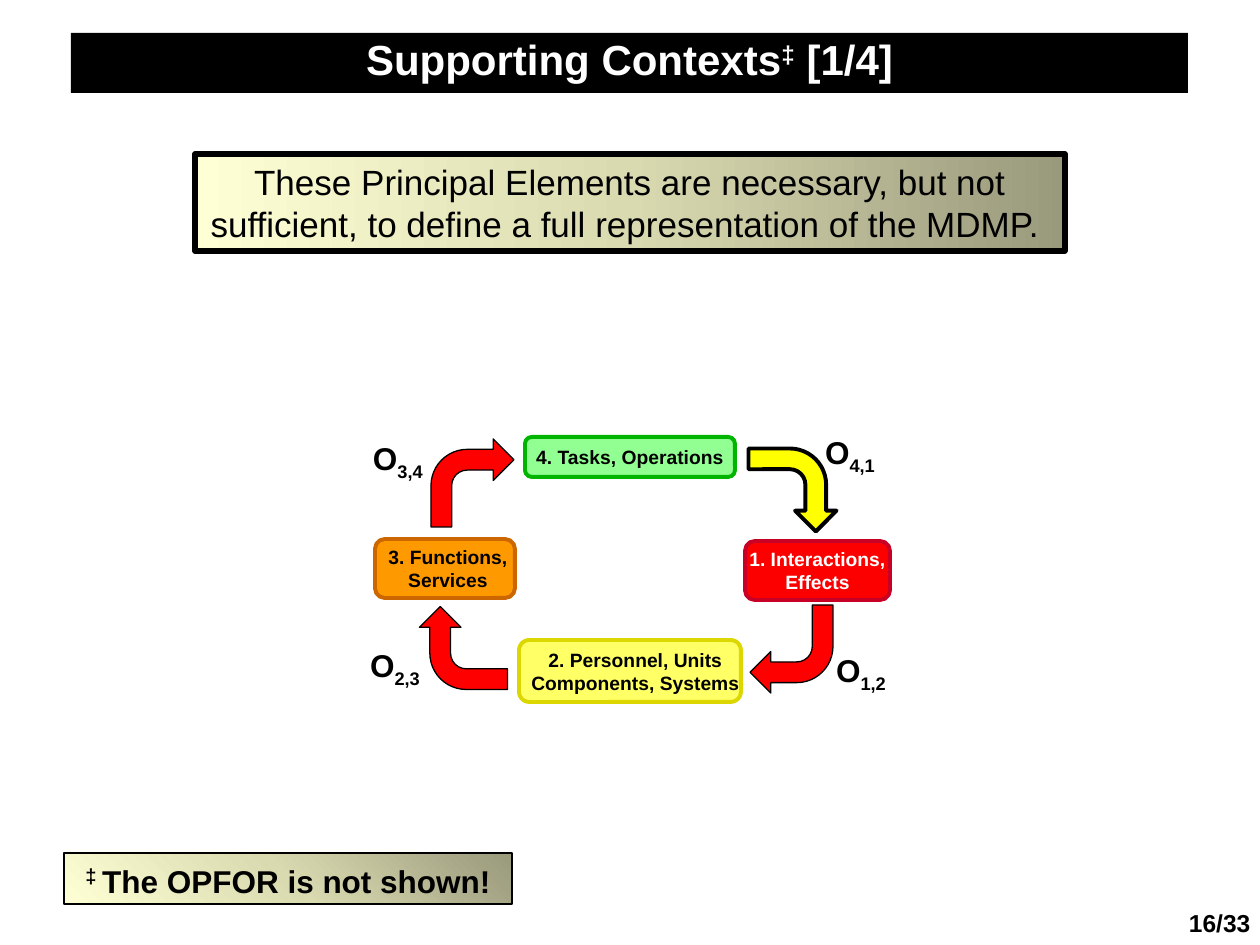
from lxml import etree
from pptx import Presentation
from pptx import util as u
from pptx.dml.color import RGBColor
from pptx.enum import shapes, text
from pptx.oxml import ns, parse_xml

PX = 914400 / 126
COLORS = {
    "black": "000000", "white": "FFFFFF",
    "shade": "99997C", "mid": "DADAB1", "cream": "FFFFD5",
    "green": "91FF91", "green edge": "00B400",
    "crimson": "FC0000", "crimson edge": "C80026",
    "lemon": "FFFF66", "lemon edge": "DCD700",
    "orange": "FF9900", "orange edge": "CC6600",
    "red": "FF0000", "yellow": "FFFF00",
}
LINEAR = '<a:lin ang="10800000" scaled="0"/>'
CORNER = '<a:path path="circle"><a:fillToRect l="100000" b="100000"/></a:path>'
SHAPE = shapes.MSO_SHAPE


def px(length):
    return u.Emu(round(length * PX))


def color(name):
    return RGBColor.from_string(COLORS[name])


def place(item, box):
    item.left, item.top, item.width, item.height = map(px, box)


def write(item, *lines, size=18, ink="black", bold=True, align=text.PP_ALIGN.CENTER,
          anchor=text.MSO_ANCHOR.TOP, inset=(13, 6, 13, 6), wrap=True, spacing=None):
    """Each line is a list of runs: (words, baseline percent, optional size)."""
    frame = item.text_frame
    frame.auto_size = text.MSO_AUTO_SIZE.NONE
    frame.word_wrap = wrap
    frame.vertical_anchor = anchor
    (frame.margin_left, frame.margin_top,
     frame.margin_right, frame.margin_bottom) = map(px, inset)
    for i, line in enumerate(lines):
        paragraph = frame.paragraphs[0] if i == 0 else frame.add_paragraph()
        paragraph.alignment = align
        if spacing:
            paragraph.line_spacing = spacing
        for words, baseline, *own_size in line:
            run = paragraph.add_run()
            run.text = words
            run.font.name = "Arial"
            run.font.size = u.Pt(own_size[0] if own_size else size)
            run.font.bold = bold
            run.font.color.rgb = color(ink)
            if baseline:
                run.font._element.set("baseline", str(baseline * 1000))


def add_block(slide, kind, box, edge, weight, fill=None):
    block = slide.shapes.add_shape(kind, *map(px, box))
    block.shadow.inherit = False
    block.line.color.rgb = color(edge)
    block.line.width = u.Pt(weight)
    if fill:
        block.fill.solid()
        block.fill.fore_color.rgb = color(fill)
    return block


def add_label(slide, box, *lines, **style):
    label = slide.shapes.add_textbox(*map(px, box))
    write(label, *lines, align=text.PP_ALIGN.LEFT, **style)


def shade(block, direction):
    """Fill with the three-stop cream gradient."""
    block.fill.gradient()
    old = block._element.spPr.find(ns.qn("a:gradFill"))
    stops = "".join(
        f'<a:gs pos="{pos}"><a:srgbClr val="{COLORS[name]}"/></a:gs>'
        for pos, name in ((0, "shade"), (50000, "mid"), (100000, "cream")))
    new = parse_xml(f'<a:gradFill {ns.nsdecls("a")} rotWithShape="1">'
                    f"<a:gsLst>{stops}</a:gsLst>{direction}</a:gradFill>")
    old.getparent().replace(old, new)


def title_bar(slide, box):
    title = slide.shapes.title
    place(title, box)
    title.fill.solid()
    title.fill.fore_color.rgb = color("black")
    write(title, [("Supporting Contexts", 0), ("‡", 30), (" [1/4]", 0)],
          size=24, ink="white", anchor=text.MSO_ANCHOR.MIDDLE, spacing=0.85)


def statement(slide, box):
    panel = add_block(slide, SHAPE.RECTANGLE, box, "black", 3)
    shade(panel, LINEAR)
    write(panel, [("These Principal Elements are necessary, but not sufficient, "
                   "to define a full representation of the MDMP. ", 0)],
          size=20, bold=False)


def footnote(slide, box):
    panel = add_block(slide, SHAPE.RECTANGLE, box, "black", 1.5)
    shade(panel, CORNER)
    write(panel, [("‡ ", 30, 20), ("The OPFOR is not shown!", 0)])


def cycle(slide, box):
    """Four elements joined clockwise by bent arrows, each with its operator."""
    left, top = box[:2]
    nodes = (
        (SHAPE.FLOWCHART_ALTERNATE_PROCESS, (166, 10, 210, 40), "green", "black", 0,
         ["4. Tasks, Operations"]),
        (SHAPE.ROUNDED_RECTANGLE, (386, 114, 145, 59), "crimson", "white", 0,
         ["1. Interactions,", "Effects"]),
        (SHAPE.ROUNDED_RECTANGLE, (160, 213, 222, 62), "lemon", "black", 11,
         ["2. Personnel, Units", "Components, Systems"]),
        (SHAPE.ROUNDED_RECTANGLE, (16, 112, 140, 59), "orange", "black", 6,
         ["3. Functions,", "Services"]),
    )
    for kind, (x, y, w, h), fill, ink, indent, lines in nodes:
        node = add_block(slide, kind, (left + x, top + y, w, h),
                         f"{fill} edge", 2.25, fill)
        write(node, *[[(line, 0)] for line in lines], size=11, ink=ink,
              anchor=text.MSO_ANCHOR.MIDDLE, inset=(indent, 0, 0, 0), wrap=False)

    steps = (
        ((72, 12), 0, "red", 0.75, "3,4", (3, 6)),
        ((63, 177), 270, "red", 0.75, "2,3", (0, 213)),
        ((391, 178), 180, "red", 0.75, "1,2", (466, 218)),
        ((392, 19), 90, "yellow", 2.25, "4,1", (455, 0)),
    )
    for (x, y), turn, fill, weight, pair, (label_x, label_y) in steps:
        arrow = add_block(slide, SHAPE.BENT_ARROW, (left + x, top + y, 83, 88),
                          "black", weight, fill)
        arrow.rotation = turn
        add_label(slide, (left + label_x, top + label_y, 94, 50),
                  [("O", 0), (pair, -25)], inset=(11, 6, 11, 6))


def main():
    deck = Presentation()
    deck.slide_width, deck.slide_height = px(1260), px(945)
    slide = deck.slides.add_slide(deck.slide_layouts[5])
    title_bar(slide, (71, 33, 1117, 60))
    statement(slide, (195, 154, 870, 97))
    footnote(slide, (64, 853, 448, 51))
    cycle(slide, (359, 427, 561, 286))
    add_label(slide, (1176, 902, 89, 43), [("16/33", 0)], size=14, wrap=False)
    deck.save("out.pptx")


if __name__ == "__main__":
    main()
